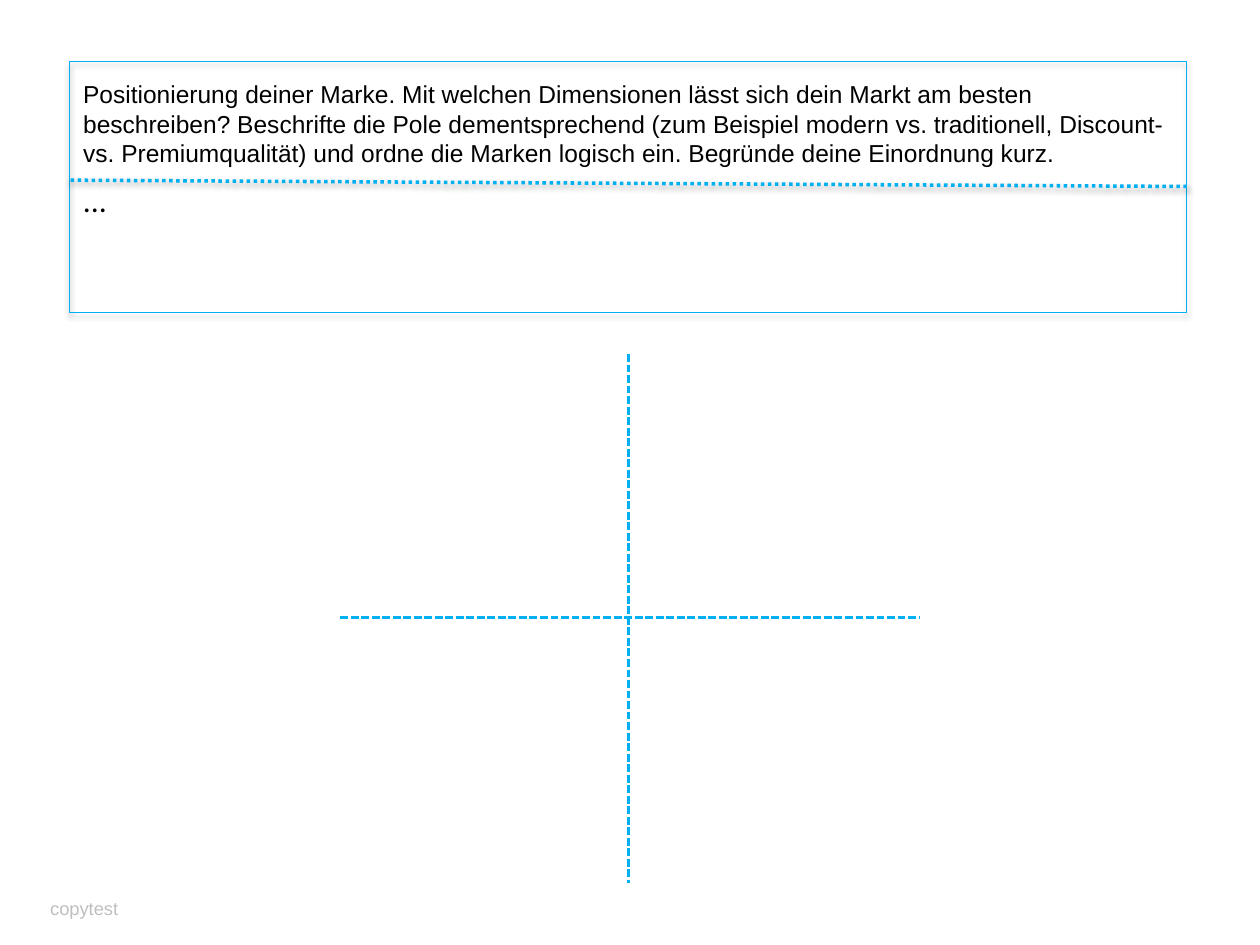
"""Build the brand positioning worksheet slide."""
from dataclasses import dataclass

from lxml import etree
from pptx import Presentation
from pptx.dml.color import RGBColor
from pptx.enum.dml import MSO_LINE
from pptx.enum.shapes import MSO_CONNECTOR, MSO_SHAPE
from pptx.enum.text import MSO_ANCHOR, MSO_AUTO_SIZE, PP_ALIGN
from pptx.oxml.ns import qn
from pptx.util import Inches, Pt

STRAIGHT = MSO_CONNECTOR.STRAIGHT
RECTANGLE = MSO_SHAPE.RECTANGLE
DASHED = MSO_LINE.SQUARE_DOT
DOTTED = MSO_LINE.ROUND_DOT
LEFT = PP_ALIGN.LEFT
TOP = MSO_ANCHOR.TOP
NO_AUTOFIT = MSO_AUTO_SIZE.NONE
TITLE_ONLY = 5

TASK = (
    "Positionierung deiner Marke. Mit welchen Dimensionen lässt sich dein Markt "
    "am besten beschreiben? Beschrifte die Pole dementsprechend (zum Beispiel "
    "modern vs. traditionell, Discount- vs. Premiumqualität) und ordne die Marken "
    "logisch ein. Begründe deine Einordnung kurz."
)


@dataclass(frozen=True)
class Theme:
    """Colours, fonts and sizes of the worksheet."""

    accent: RGBColor = RGBColor(0x00, 0xB0, 0xF0)
    ink: RGBColor = RGBColor(0x00, 0x00, 0x00)
    muted: RGBColor = RGBColor(0xBF, 0xBF, 0xBF)
    font: str = "Arial"
    answer_font: str = "Calibri"
    task_size: float = 14
    answer_size: float = 18
    footer_size: float = 10.5
    frame_width: float = 0.75
    axis_width: float = 1.5
    divider_width: float = 2


class Worksheet:
    """Draw styled elements on the current slide."""

    def __init__(self, slide, theme):
        self.slide = slide
        self.theme = theme

    def fill_text(self, box, text, size, color, font):
        """Fill a text shape with one left-aligned paragraph."""
        frame = box.text_frame
        frame_format = {"word_wrap": True, "auto_size": NO_AUTOFIT, "vertical_anchor": TOP}
        for name, value in frame_format.items():
            setattr(frame, name, value)
        para = frame.paragraphs[0]
        para.alignment = LEFT
        span = para.add_run()
        span.text = text
        for name, value in {"name": font, "size": Pt(size)}.items():
            setattr(span.font, name, value)
        span.font.color.rgb = color

    def title(self, bounds, text):
        """Place the task in the title placeholder."""
        box = self.slide.shapes.title
        for name, value in zip(("left", "top", "width", "height"), bounds):
            setattr(box, name, Inches(value))
        self.fill_text(box, text, self.theme.task_size, self.theme.ink, self.theme.font)

    def text(self, bounds, text, size, color, font):
        """Add a text box."""
        box = self.slide.shapes.add_textbox(*map(Inches, bounds))
        self.fill_text(box, text, size, color, font)

    def frame(self, bounds):
        """Add an unfilled outline with the theme shadow."""
        box = self.slide.shapes.add_shape(RECTANGLE, *map(Inches, bounds))
        box.fill.background()
        box.line.color.rgb = self.theme.accent
        box.line.width = Pt(self.theme.frame_width)

    def line(self, shapes, ends, width, dash, shadow=False):
        """Add a patterned accent line to a shape collection."""
        connector = shapes.add_connector(STRAIGHT, *map(Inches, ends))
        connector.line.color.rgb = self.theme.accent
        for name, value in {"width": Pt(width), "dash_style": dash}.items():
            setattr(connector.line, name, value)
        if not shadow:
            etree.SubElement(connector.element.spPr, qn("a:effectLst"))

    def axes(self, *lines):
        """Add the positioning axes as one group."""
        group = self.slide.shapes.add_group_shape()
        for ends in lines:
            self.line(group.shapes, ends, self.theme.axis_width, DASHED)


def main():
    """Create and save the deck."""
    deck = Presentation()
    deck.slide_width, deck.slide_height = Inches(10), Inches(7.5)
    theme = Theme()
    slide = deck.slides.add_slide(deck.slide_layouts[TITLE_ONLY])
    sheet = Worksheet(slide, theme)

    sheet.text((0.3, 7.07, 2.38, 0.4), "copytest", theme.footer_size, theme.muted, theme.font)
    sheet.axes((2.7, 4.9, 7.3, 4.9), (4.99, 2.81, 4.99, 7.01))
    sheet.frame((0.55, 0.49, 8.87, 1.99))
    sheet.title((0.56, 0.58, 8.86, 0.81), TASK)
    sheet.line(slide.shapes, (0.56, 1.43, 9.42, 1.48), theme.divider_width, DOTTED, shadow=True)
    sheet.text((0.56, 1.39, 0.7, 0.4), "...", theme.answer_size, theme.ink, theme.answer_font)
    deck.save("out.pptx")


if __name__ == "__main__":
    main()
